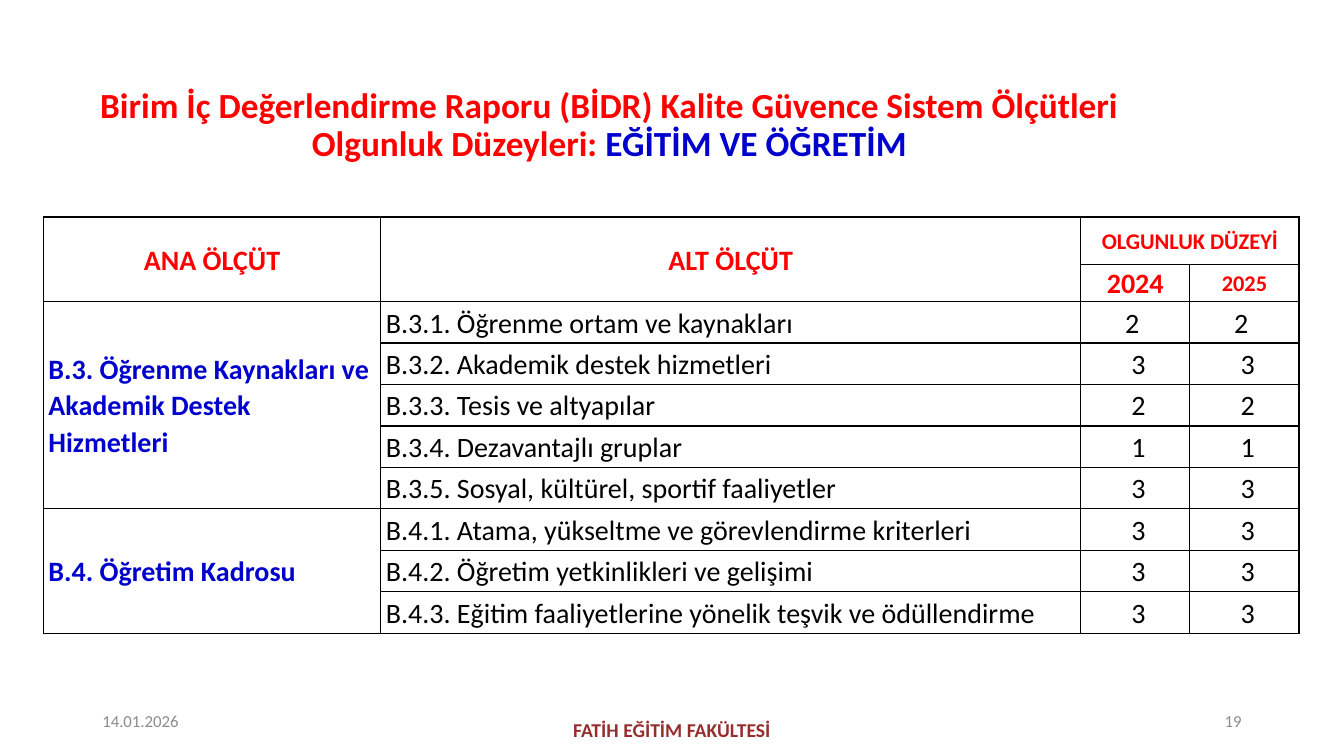
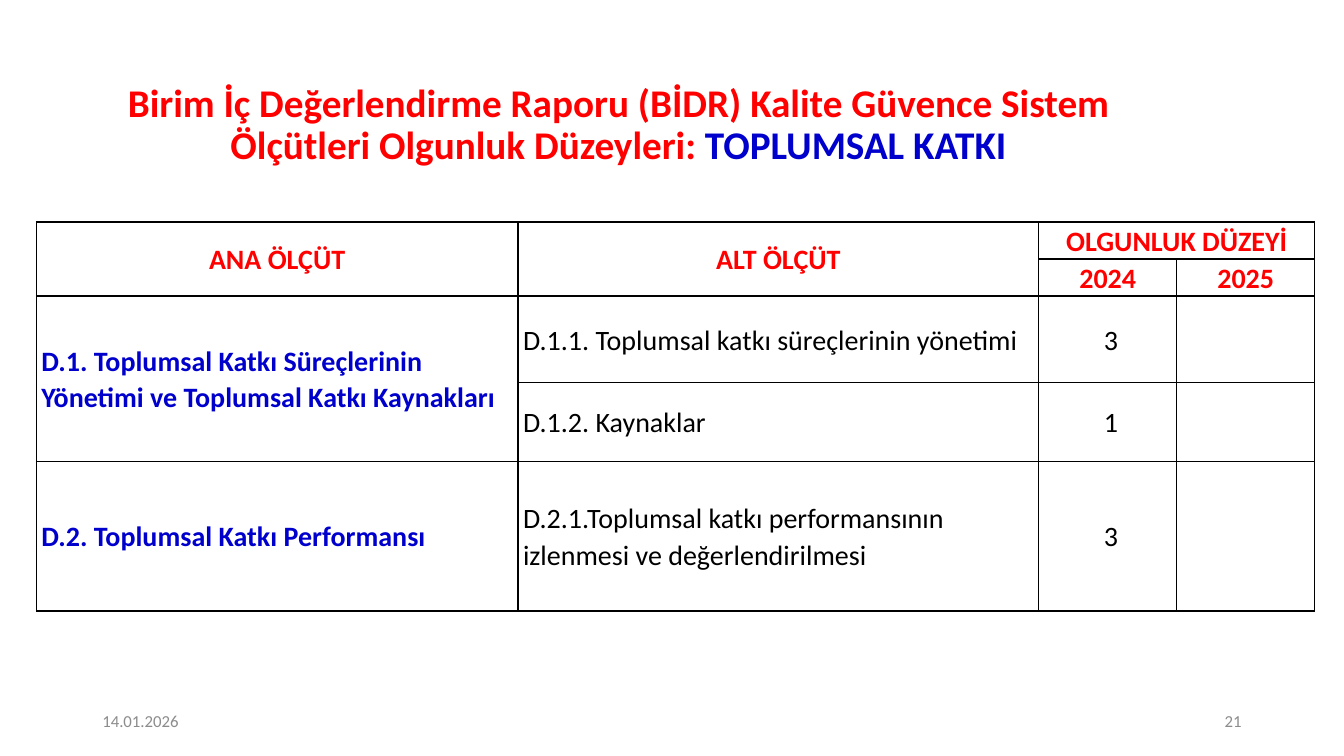
from dataclasses import dataclass

from lxml.etree import SubElement
from pptx import Presentation
from pptx.dml.color import RGBColor
from pptx.enum.text import MSO_ANCHOR, MSO_AUTO_SIZE, PP_ALIGN
from pptx.oxml.ns import qn
from pptx.util import Pt


@dataclass(frozen=True)
class Theme:
    font: str = "Calibri"
    red: RGBColor = RGBColor(0xFF, 0x00, 0x00)
    blue: RGBColor = RGBColor(0x00, 0x00, 0xCC)
    black: RGBColor = RGBColor(0x00, 0x00, 0x00)
    gray: RGBColor = RGBColor(0x8C, 0x8C, 0x8C)
    maroon: RGBColor = RGBColor(0x96, 0x2E, 0x2E)
    body: float = 20
    small_head: float = 16
    faculty: float = 14
    footer: float = 12
    border: float = 1


T = Theme()
TITLE = "Birim İç Değerlendirme Raporu (BİDR) Kalite Güvence Sistem Ölçütleri Olgunluk Düzeyleri: "
DATE = "14.01.2026"
NBSP = " "  # non-breaking space beside each score


def style(p, size, color, bold=False, align=PP_ALIGN.LEFT, spacing=None):
    p.alignment = align
    if spacing:
        p.line_spacing = spacing
    p.font.name = T.font
    p.font.size = Pt(size)
    p.font.bold = bold
    p.font.color.rgb = color


def place(sp, box):
    sp.left, sp.top, sp.width, sp.height = map(Pt, box)


def add_title(slide, box, topic, size):
    sp = slide.shapes.title
    place(sp, box)
    tf = sp.text_frame
    tf.auto_size = MSO_AUTO_SIZE.NONE
    tf.word_wrap = True
    tf.vertical_anchor = MSO_ANCHOR.MIDDLE
    p = tf.paragraphs[0]
    style(p, size, T.red, True, PP_ALIGN.CENTER, 0.9)
    p.add_run().text = TITLE
    r = p.add_run()
    r.text = topic
    r.font.color.rgb = T.blue


def add_label(slide, box, text, size, color, bold=False, align=PP_ALIGN.LEFT):
    tf = slide.shapes.add_textbox(*map(Pt, box)).text_frame
    tf.word_wrap = True
    tf.vertical_anchor = MSO_ANCHOR.MIDDLE
    p = tf.paragraphs[0]
    p.text = text
    style(p, size, color, bold, align)


def add_footer(slide, number, faculty=None):
    add_label(slide, (66, 500.5, 216, 29), DATE, T.footer, T.gray)
    add_label(slide, (678, 500.5, 216, 29), number, T.footer, T.gray, align=PP_ALIGN.RIGHT)
    if faculty:
        add_label(slide, (318, 507, 324, 29), faculty, T.faculty, T.maroon, True, PP_ALIGN.CENTER)


def frame_cell(cell):
    """Give a cell its insets, black borders and no fill."""
    cell.margin_left = cell.margin_right = Pt(3.6)
    cell.margin_top = cell.margin_bottom = 0
    cell.vertical_anchor = MSO_ANCHOR.MIDDLE
    tc_pr = cell._tc.get_or_add_tcPr()
    for side in ("a:lnL", "a:lnR", "a:lnT", "a:lnB"):
        ln = SubElement(tc_pr, qn(side), w=str(Pt(T.border)))
        fill = SubElement(ln, qn("a:solidFill"))
        SubElement(fill, qn("a:srgbClr"), val=str(T.black))
    cell.fill.background()


def write_cell(cell, text, color=T.black, bold=False, align=PP_ALIGN.CENTER, size=T.body):
    p = cell.text_frame.paragraphs[0]
    p.text = text
    style(p, size, color, bold, align, 1.07)


def add_criteria_table(slide, corner, cols, rows, groups, head_sizes, sub_align):
    """groups: (main criterion, [(sub-criterion, score, ...)]);
    head_sizes: type sizes of the level heading and of each year."""
    box = (*corner, sum(cols), sum(rows))
    table = slide.shapes.add_table(len(rows), len(cols), *map(Pt, box)).table
    table.first_row = table.horz_banding = False
    for col, width in zip(table.columns, cols):
        col.width = Pt(width)
    for row, height in zip(table.rows, rows):
        row.height = Pt(height)
    for cell in table.iter_cells():
        frame_cell(cell)

    for c in (0, 1):
        table.cell(0, c).merge(table.cell(1, c))
    table.cell(0, 2).merge(table.cell(0, 3))
    heads = ((0, 0, "ANA ÖLÇÜT", T.body), (0, 1, "ALT ÖLÇÜT", T.body),
             (0, 2, "OLGUNLUK DÜZEYİ", head_sizes[0]),
             (1, 2, "2024", head_sizes[1]), (1, 3, "2025", head_sizes[2]))
    for r, c, text, size in heads:
        write_cell(table.cell(r, c), text, T.red, True, size=size)

    r = 2
    for main, subs in groups:
        if len(subs) > 1:
            table.cell(r, 0).merge(table.cell(r + len(subs) - 1, 0))
        write_cell(table.cell(r, 0), main, T.blue, True, PP_ALIGN.LEFT)
        for sub, *scores in subs:
            write_cell(table.cell(r, 1), sub, align=sub_align)
            for c, score in enumerate(scores, 2):
                write_cell(table.cell(r, c), score)
            r += 1


def before(score):
    return NBSP + str(score)


def add_education_slide(prs):
    slide = prs.slides.add_slide(prs.slide_layouts[5])
    add_title(slide, (31, 65, 808.5, 50), "EĞİTİM VE ÖĞRETİM", 25.2)
    groups = [
        ("B.3. Öğrenme Kaynakları ve Akademik Destek Hizmetleri", [
            ("B.3.1. Öğrenme ortam ve kaynakları", "2" + NBSP, "2" + NBSP),
            ("B.3.2. Akademik destek hizmetleri", before(3), before(3)),
            ("B.3.3. Tesis ve altyapılar", before(2), before(2)),
            ("B.3.4. Dezavantajlı gruplar", before(1), before(1)),
            ("B.3.5. Sosyal, kültürel, sportif faaliyetler", before(3), before(3)),
        ]),
        ("B.4. Öğretim Kadrosu", [
            ("B.4.1. Atama, yükseltme ve görevlendirme kriterleri", before(3), before(3)),
            ("B.4.2. Öğretim yetkinlikleri ve gelişimi", before(3), before(3)),
            ("B.4.3. Eğitim faaliyetlerine yönelik teşvik ve ödüllendirme", before(3), before(3)),
        ]),
    ]
    add_criteria_table(slide, (31, 155), (241, 500, 78, 78), (34, 26.5) + (29.6,) * 8, groups,
                       (T.small_head, T.body, T.small_head), PP_ALIGN.JUSTIFY)
    add_footer(slide, "19", "FATİH EĞİTİM FAKÜLTESİ")


def add_community_slide(prs):
    slide = prs.slides.add_slide(prs.slide_layouts[5])
    add_title(slide, (37.5, 55, 808.5, 70), "TOPLUMSAL KATKI", 28)
    groups = [
        ("D.1. Toplumsal Katkı Süreçlerinin Yönetimi ve Toplumsal Katkı Kaynakları", [
            ("D.1.1. Toplumsal katkı süreçlerinin yönetimi", before(3)),
            ("D.1.2. Kaynaklar", before(1)),
        ]),
        ("D.2. Toplumsal Katkı Performansı", [
            ("D.2.1.Toplumsal katkı performansının izlenmesi ve değerlendirilmesi", before(3)),
        ]),
    ]
    add_criteria_table(slide, (26, 158.5), (344, 372, 98.6, 98.6), (26.5, 26.5, 62, 56, 107),
                       groups, (T.body,) * 3, PP_ALIGN.LEFT)
    add_footer(slide, "21")


def main():
    prs = Presentation()
    prs.slide_width, prs.slide_height = Pt(960), Pt(540)
    add_education_slide(prs)
    add_community_slide(prs)
    prs.save("out.pptx")


if __name__ == "__main__":
    main()
